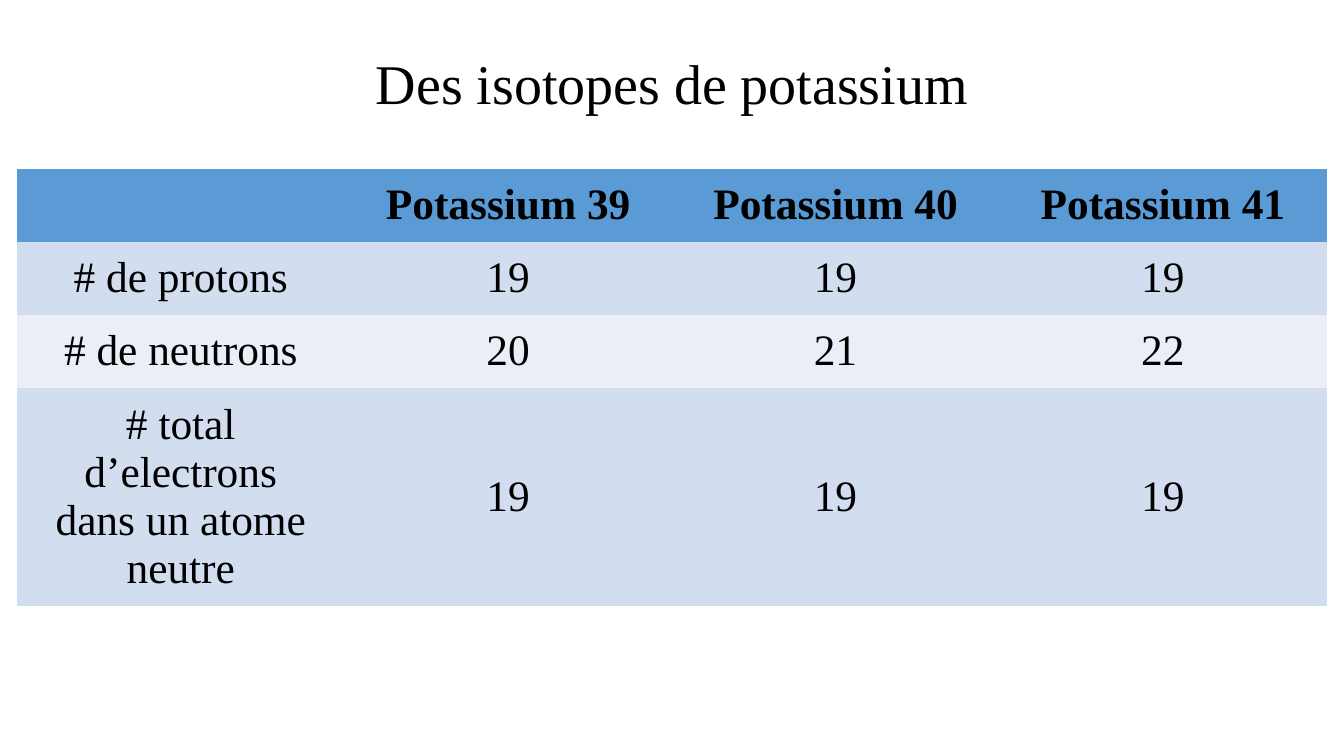
from pptx import Presentation
from pptx.dml.color import RGBColor
from pptx.enum import text
from pptx.util import Cm, Pt

BLACK = RGBColor(0x00, 0x00, 0x00)
HEADER = RGBColor(0x5B, 0x9B, 0xD5)
BAND_DARK = RGBColor(0xD2, 0xDE, 0xEF)
BAND_LIGHT = RGBColor(0xEA, 0xEF, 0xF7)
NO_STYLE_NO_GRID = "{2D5ABB26-0587-4C30-8999-92F81FD0307C}"


def format_paragraph(p, size, bold=False):
    p.alignment = text.PP_ALIGN.CENTER
    p.font.name = "Times New Roman"
    p.font.size = Pt(size)
    p.font.bold = bold
    p.font.color.rgb = BLACK


prs = Presentation()
prs.slide_width, prs.slide_height = Cm(33.87), Cm(19.05)
s = prs.slides.add_slide(prs.slide_layouts[6])

title = s.shapes.add_textbox(Cm(2.33), Cm(1.02), Cm(29.21), Cm(2.3))
tf = title.text_frame
tf.word_wrap = True
tf.vertical_anchor = text.MSO_ANCHOR.MIDDLE
p = tf.paragraphs[0]
p.text = "Des isotopes de potassium"
p.line_spacing = 0.9
format_paragraph(p, 40)

isotopes = [
    ["", "Potassium 39", "Potassium 40", "Potassium 41"],
    ["# de protons", "19", "19", "19"],
    ["# de neutrons", "20", "21", "22"],
    ["# total d’electrons\ndans un atome neutre", "19", "19", "19"],
]
fills = [HEADER, BAND_DARK, BAND_LIGHT, BAND_DARK]
heights = [1.84, 1.84, 1.84, 5.08]

frame = s.shapes.add_table(4, 4, Cm(0.43), Cm(4.25), Cm(33), Cm(sum(heights)))
table = frame.table
table._tbl.tblPr.find("{*}tableStyleId").text = NO_STYLE_NO_GRID
for column in table.columns:
    column.width = Cm(8.25)

for i, (values, fill, height) in enumerate(zip(isotopes, fills, heights)):
    table.rows[i].height = Cm(height)
    for j, value in enumerate(values):
        cell = table.cell(i, j)
        cell.fill.solid()
        cell.fill.fore_color.rgb = fill
        cell.vertical_anchor = text.MSO_ANCHOR.MIDDLE
        cell.text = value
        for p in cell.text_frame.paragraphs:
            format_paragraph(p, 31, bold=i == 0)

prs.save("out.pptx")
